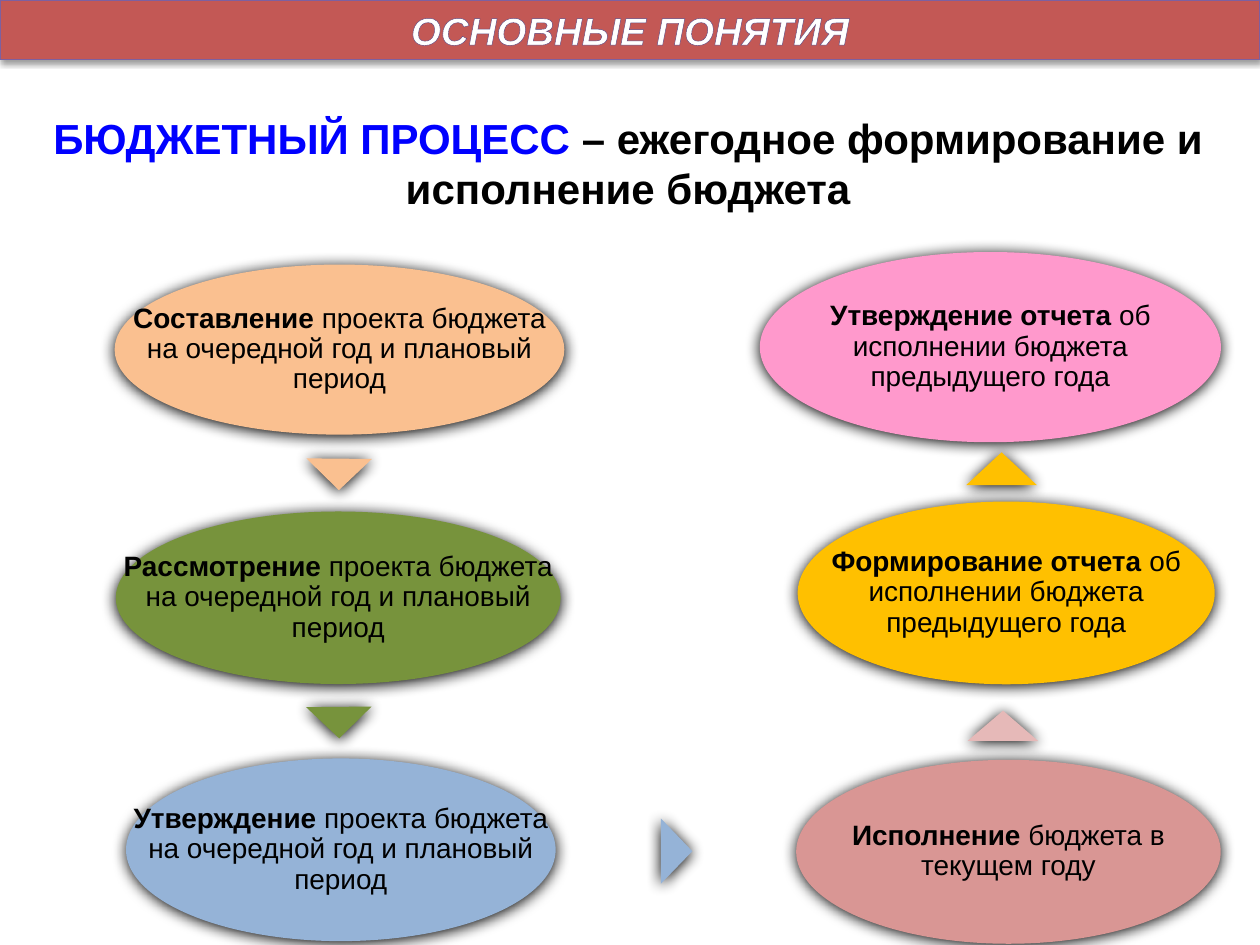
from lxml import etree
from pptx import Presentation
from pptx.dml.color import RGBColor
from pptx.enum.shapes import MSO_SHAPE
from pptx.enum.text import MSO_ANCHOR, MSO_AUTO_SIZE, PP_ALIGN
from pptx.oxml import parse_xml
from pptx.oxml.ns import nsdecls, qn
from pptx.util import Pt

ELLIPSE = MSO_SHAPE.OVAL
TRIANGLE = MSO_SHAPE.ISOSCELES_TRIANGLE
CENTER = PP_ALIGN.CENTER
MIDDLE = MSO_ANCHOR.MIDDLE
TOP = MSO_ANCHOR.TOP
NO_AUTOFIT = MSO_AUTO_SIZE.NONE

FONT = "Arial"
BLACK = RGBColor(0x00, 0x00, 0x00)
WHITE = RGBColor(0xFF, 0xFF, 0xFF)
BLUE = RGBColor(0x00, 0x00, 0xFF)
BRICK = RGBColor(0xC3, 0x58, 0x55)
PURPLE = RGBColor(0x7D, 0x60, 0xA0)
DARK_PURPLE = RGBColor(0x5E, 0x45, 0x7C)
PEACH = RGBColor(0xFA, 0xC0, 0x90)
GREEN = RGBColor(0x77, 0x93, 0x3C)
LIGHT_BLUE = RGBColor(0x95, 0xB3, 0xD7)
ROSE = RGBColor(0xD9, 0x96, 0x94)
LIGHT_ROSE = RGBColor(0xE6, 0xB9, 0xB8)
GOLD = RGBColor(0xFF, 0xC0, 0x00)
PINK = RGBColor(0xFF, 0x99, 0xCC)

DRAFT_TEXT = "проекта бюджета на очередной год и плановый период"
REPORT_TEXT = "об исполнении бюджета предыдущего года"

STAGES = [
    ((65.5, 151.2, 257, 97.2), PEACH, "Составление ", DRAFT_TEXT),
    ((66.2, 292.3, 254.2, 98.6), GREEN, "Рассмотрение ", DRAFT_TEXT),
    ((72, 433.4, 245.5, 104.4), LIGHT_BLUE, "Утверждение ", DRAFT_TEXT),
    ((455, 434.2, 242.6, 105.1), ROSE, "Исполнение ", "бюджета в текущем году"),
    ((455.8, 286.6, 238.3, 104.4), GOLD, "Формирование отчета ", REPORT_TEXT),
    ((434.2, 144, 263.5, 108.7), PINK, "Утверждение отчета ", REPORT_TEXT),
]

POINTERS = [
    ((175, 262.1, 37.4, 18), PEACH, 180.5),
    ((175, 403.9, 37.4, 18), GREEN, 179.5),
    ((367.9, 477.4, 37.4, 18), LIGHT_BLUE, 90.1),
    ((553, 406.1, 40.3, 17.3), LIGHT_ROSE, 0.2),
    ((552.2, 258.5, 40.3, 18.7), GOLD, 0),
]


def place(shape, box):
    shape.left, shape.top, shape.width, shape.height = map(Pt, box)


def add_shadow(shape, blur, distance, opacity):
    shape.shadow.inherit = False
    effects = shape._element.spPr.find(qn("a:effectLst"))
    effects.append(parse_xml(
        f'<a:outerShdw {nsdecls("a")} blurRad="{Pt(blur)}" dist="{Pt(distance)}" '
        f'dir="5400000" rotWithShape="0"><a:srgbClr val="000000">'
        f'<a:alpha val="{opacity * 1000}"/></a:srgbClr></a:outerShdw>'))


def add_run(paragraph, text, size, color, bold=True, italic=False):
    run = paragraph.add_run()
    run.text = text
    run.font.name = FONT
    run.font.size = Pt(size)
    run.font.bold = bold
    run.font.italic = italic
    run.font.color.rgb = color
    return run


def outline_run(run, color, width):
    line = parse_xml(
        f'<a:ln {nsdecls("a")} w="{Pt(width)}"><a:solidFill>'
        f'<a:srgbClr val="{color}"/></a:solidFill></a:ln>')
    run.font._element.insert(0, line)


def fill_banner(title, box):
    place(title, box)
    title.fill.solid()
    title.fill.fore_color.rgb = BRICK
    title.line.color.rgb = PURPLE
    title.line.width = Pt(0.75)
    add_shadow(title, 3.1, 1.6, 38)
    frame = title.text_frame
    frame.auto_size = NO_AUTOFIT
    frame.vertical_anchor = MIDDLE
    paragraph = frame.paragraphs[0]
    paragraph.alignment = CENTER
    run = add_run(paragraph, "ОСНОВНЫЕ ПОНЯТИЯ", 22, WHITE, italic=True)
    outline_run(run, DARK_PURPLE, 0.71)


def fill_definition(body, box):
    place(body, box)
    frame = body.text_frame
    frame.auto_size = NO_AUTOFIT
    frame.vertical_anchor = TOP
    paragraph = frame.paragraphs[0]
    properties = paragraph._p.get_or_add_pPr()
    properties.set("marL", "0")
    properties.set("indent", "0")
    etree.SubElement(properties, qn("a:buNone"))
    paragraph.alignment = CENTER
    paragraph.space_before = Pt(0)
    add_run(paragraph, "БЮДЖЕТНЫЙ ПРОЦЕСС ", 24, BLUE)
    add_run(paragraph, "– ежегодное формирование и исполнение бюджета", 24, BLACK)


def add_solid(slide, kind, box, color):
    shape = slide.shapes.add_shape(kind, *map(Pt, box))
    shape.fill.solid()
    shape.fill.fore_color.rgb = color
    shape.line.fill.background()
    add_shadow(shape, 8.5, 1, 100)
    return shape


def add_stage(slide, box, color, keyword, description):
    add_solid(slide, ELLIPSE, box, color)
    label = slide.shapes.add_textbox(*map(Pt, box))
    frame = label.text_frame
    frame.word_wrap = True
    frame.vertical_anchor = MIDDLE
    frame.margin_left = frame.margin_right = Pt(1.5)
    frame.margin_top = frame.margin_bottom = Pt(1.5)
    paragraph = frame.paragraphs[0]
    paragraph.alignment = CENTER
    paragraph.line_spacing = 0.9
    add_run(paragraph, keyword, 16, BLACK)
    add_run(paragraph, description, 16, BLACK, bold=False)


def add_pointer(slide, box, color, angle):
    add_solid(slide, TRIANGLE, box, color).rotation = angle


def main():
    presentation = Presentation()
    presentation.slide_width = Pt(720)
    presentation.slide_height = Pt(540)
    slide = presentation.slides.add_slide(presentation.slide_layouts[1])
    fill_banner(slide.shapes.title, (0, 0, 720, 34))
    fill_definition(slide.placeholders[1], (18.7, 60.5, 680.4, 65.5))
    for stage in STAGES:
        add_stage(slide, *stage)
    for pointer in POINTERS:
        add_pointer(slide, *pointer)
    presentation.save("out.pptx")


if __name__ == "__main__":
    main()
